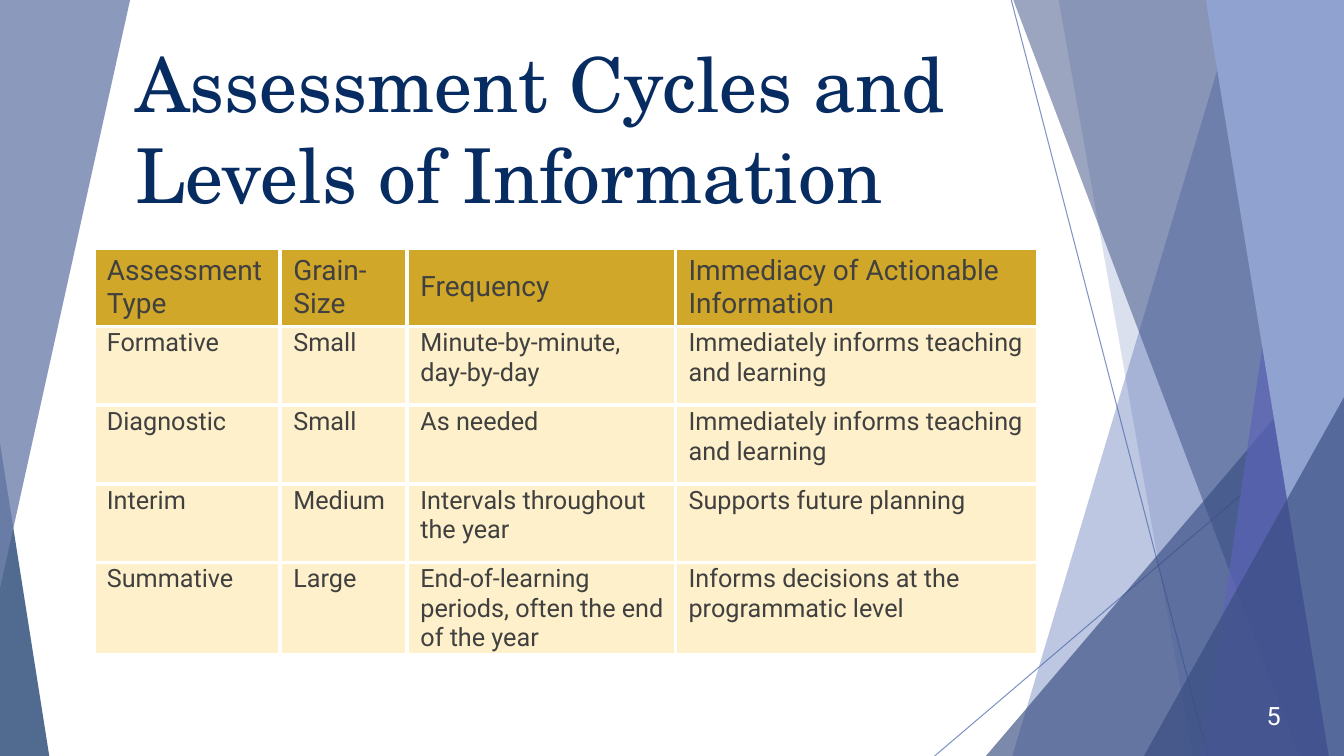
from dataclasses import dataclass

from lxml.etree import SubElement
from pptx import Presentation
from pptx.dml.color import RGBColor
from pptx.enum.shapes import MSO_CONNECTOR, MSO_SHAPE
from pptx.enum.text import MSO_ANCHOR, MSO_AUTO_SIZE, PP_ALIGN
from pptx.oxml.ns import qn
from pptx.util import Inches, Pt


@dataclass(frozen=True)
class Theme:
    blue: str = "4A66AC"
    deep_blue: str = "384C81"
    violet: str = "5C64B7"
    pale_blue: str = "90A2CF"
    grey_blue: str = "6F81AC"
    navy: str = "072C62"
    gold: str = "D0A728"
    cream: str = "FEF0CA"
    ink: str = "404040"
    white: str = "FFFFFF"
    title_font: str = "TeX Gyre Schola"
    body_font: str = "Roboto"
    title_size: int = 54
    header_size: int = 20
    body_size: int = 18


THEME = Theme()
WIDTH, HEIGHT = 13.33, 7.5

# Ends of the thin lines: x1, y1, x2, y2
THIN_LINES = [(10.03, 0, 11.98, HEIGHT), (WIDTH, 4.04, 9.27, HEIGHT)]

# Facets from back to front. A band runs from its slanted left edge (top x,
# bottom x) to the right side of the slide; a wedge is a right triangle given
# as left, top, width, height, apex position and vertical flip.
FACETS = [
    ("band", (12.28, 10.04), THEME.blue, 36),
    ("band", (10.5, 11.83), THEME.blue, 20),
    ("wedge", (9.77, 3.34, 3.56, 4.17, 1, False), THEME.deep_blue, 66),
    ("band", (10.05, 12.89), THEME.deep_blue, 50),
    ("band", (13.03, 11.92), THEME.violet, 70),
    ("band", (11.96, 13.18), THEME.pale_blue, 100),
    ("wedge", (11.34, 3.94, 1.99, 3.57, 1, False), THEME.deep_blue, 66),
    ("wedge", (0, 4.4, 0.49, 3.11, 0, False), THEME.navy, 70),
    ("wedge", (0, 0, 1.29, 5.84, 0, True), THEME.grey_blue, 80),
]

COLUMN_WIDTHS = [1.85, 1.26, 2.66, 3.59]
ROW_HEIGHT = 0.78
ASSESSMENTS = [
    ["Assessment Type", "Grain-Size", "Frequency", "Immediacy of Actionable Information"],
    ["Formative", "Small", "Minute-by-minute, \vday-by-day",
     "Immediately informs teaching and learning"],
    ["Diagnostic", "Small", "As needed", "Immediately informs teaching and learning"],
    ["Interim", "Medium", "Intervals throughout the year", "Supports future planning"],
    ["Summative", "Large", "End-of-learning periods, often the end of the year",
     "Informs decisions at the programmatic level"],
]


def set_all(target, values):
    for name, value in values.items():
        setattr(target, name, value)


def write(frame, text, font, size, color, align=PP_ALIGN.LEFT):
    frame.text = text
    for para in frame.paragraphs:
        para.alignment = align
        for span in para.runs:
            set_all(span.font, {"name": font, "size": Pt(size), "bold": False})
            span.font.color.rgb = RGBColor.from_string(color)


def set_opacity(element, percent):
    """Add an alpha value to the first colour found in the element."""
    color = next(element.iter(qn("a:srgbClr")))
    SubElement(color, qn("a:alpha"), val=str(percent * 1000))


def add_thin_line(page, ends):
    line = page.shapes.add_connector(MSO_CONNECTOR.STRAIGHT, *map(Inches, ends))
    line.line.width = Pt(0.75)
    line.line.color.rgb = RGBColor.from_string(THEME.blue)
    properties = line._element.spPr
    set_opacity(properties, 70)
    SubElement(properties, qn("a:effectLst"))


def add_band(page, top_x, bottom_x):
    corners = [(WIDTH, 0), (WIDTH, HEIGHT), (bottom_x, HEIGHT)]
    builder = page.shapes.build_freeform(Inches(top_x), 0)
    builder.add_line_segments([(Inches(x), Inches(y)) for x, y in corners])
    return builder.convert_to_shape()


def add_wedge(page, left, top, width, height, apex, flipped):
    box = map(Inches, (left, top, width, height))
    wedge = page.shapes.add_shape(MSO_SHAPE.ISOSCELES_TRIANGLE, *box)
    wedge.adjustments[0] = apex
    if flipped:
        wedge._element.spPr.find(qn("a:xfrm")).set("flipV", "1")
    return wedge


def add_facet(page, kind, geometry, color, opacity):
    facet = {"band": add_band, "wedge": add_wedge}[kind](page, *geometry)
    facet.shadow.inherit = False
    facet.line.fill.background()
    facet.fill.solid()
    facet.fill.fore_color.rgb = RGBColor.from_string(color)
    if opacity < 100:
        set_opacity(facet._element.spPr, opacity)


def set_title(page, text):
    title = page.shapes.title
    set_all(title, {"left": Inches(1.24), "top": Inches(0.32),
                    "width": Inches(9.83), "height": Inches(1.44)})
    set_all(title.text_frame, {"word_wrap": True, "auto_size": MSO_AUTO_SIZE.NONE,
                               "vertical_anchor": MSO_ANCHOR.TOP})
    write(title.text_frame, text, THEME.title_font, THEME.title_size, THEME.navy)
    page.shapes._spTree.append(title._element)  # in front of the facets


def add_borders(cell):
    properties = cell._tc.get_or_add_tcPr()
    for index, side in enumerate(("a:lnL", "a:lnR", "a:lnT", "a:lnB")):
        border = properties.makeelement(qn(side), {"w": str(Pt(3))})
        fill = SubElement(border, qn("a:solidFill"))
        SubElement(fill, qn("a:srgbClr"), val=THEME.white)
        properties.insert(index, border)


def format_cell(cell, text, is_header):
    set_all(cell, {"margin_left": Inches(0.13), "margin_right": Inches(0.05),
                   "margin_top": Inches(0.02), "margin_bottom": Inches(0.02),
                   "vertical_anchor": MSO_ANCHOR.MIDDLE if is_header else MSO_ANCHOR.TOP})
    cell.fill.solid()
    cell.fill.fore_color.rgb = RGBColor.from_string(THEME.gold if is_header else THEME.cream)
    size = THEME.header_size if is_header else THEME.body_size
    write(cell.text_frame, text, THEME.body_font, size, THEME.ink)
    add_borders(cell)


def add_assessment_table(page):
    box = (0.93, 2.46, sum(COLUMN_WIDTHS), ROW_HEIGHT * len(ASSESSMENTS))
    frame = page.shapes.add_table(len(ASSESSMENTS), len(COLUMN_WIDTHS), *map(Inches, box))
    table = frame.table
    table.horz_banding = False
    for column, width in zip(table.columns, COLUMN_WIDTHS):
        column.width = Inches(width)
    for row_index, texts in enumerate(ASSESSMENTS):
        table.rows[row_index].height = Inches(ROW_HEIGHT)
        for column_index, text in enumerate(texts):
            format_cell(table.cell(row_index, column_index), text, row_index == 0)


def add_page_number(page, number):
    box = page.shapes.add_textbox(*map(Inches, (12.05, 6.9, 0.75, 0.4)))
    set_all(box.text_frame, {"word_wrap": True, "vertical_anchor": MSO_ANCHOR.MIDDLE})
    write(box.text_frame, number, THEME.body_font, THEME.body_size, THEME.white,
          PP_ALIGN.RIGHT)


def main():
    deck = Presentation()
    set_all(deck, {"slide_width": Inches(WIDTH), "slide_height": Inches(HEIGHT)})
    page = deck.slides.add_slide(deck.slide_layouts.get_by_name("Title Only"))
    for ends in THIN_LINES:
        add_thin_line(page, ends)
    for facet in FACETS:
        add_facet(page, *facet)
    set_title(page, "Assessment Cycles and Levels of Information")
    add_assessment_table(page)
    add_page_number(page, "5")
    deck.save("out.pptx")


if __name__ == "__main__":
    main()
